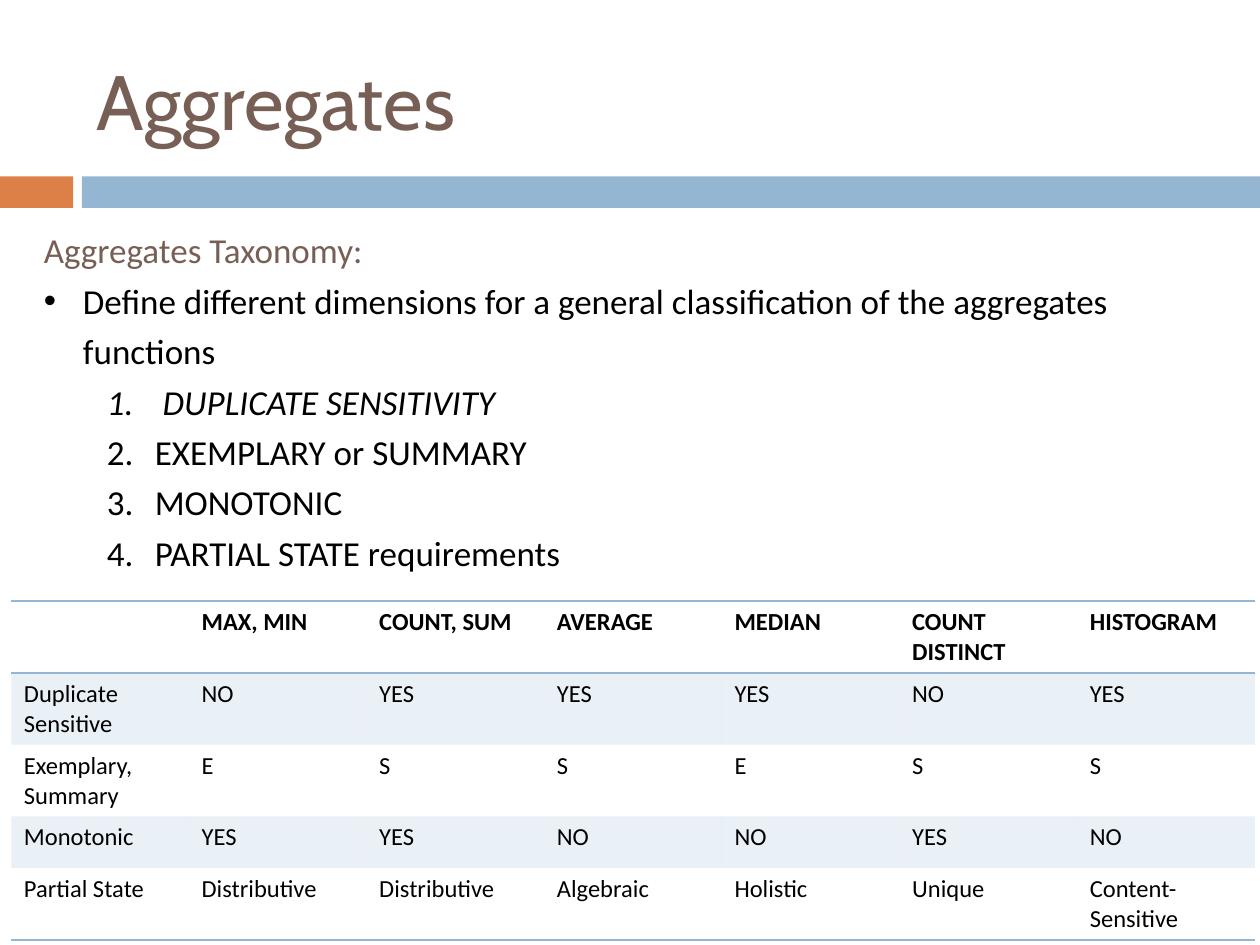
from pptx import Presentation
from pptx.dml.color import RGBColor
from pptx.enum.shapes import MSO_SHAPE as Shape
from pptx.enum.text import MSO_ANCHOR as Anchor, MSO_AUTO_SIZE as AutoSize
from pptx.oxml.ns import qn
from pptx.util import Inches, Pt
from lxml.etree import SubElement, Element

BROWN = RGBColor(0x77, 0x5F, 0x55)
ORANGE = RGBColor(0xDD, 0x80, 0x47)
BLUE = RGBColor(0x94, 0xB6, 0xD2)
BLACK = RGBColor(0, 0, 0)

TAXONOMY = [
    # text, colour, level, left margin, hanging indent, marker, italic
    ("Aggregates Taxonomy:", BROWN, 0, 0, 0, None, False),
    ("Define different dimensions for a general classification of the "
     "aggregates functions", BLACK, 0, 0.31, 0.31, "bullet", False),
    (" DUPLICATE SENSITIVITY", BLACK, 1, 0.88, 0.38, "number", True),
    ("EXEMPLARY or SUMMARY", BLACK, 1, 0.88, 0.38, "number", False),
    ("MONOTONIC", BLACK, 1, 0.88, 0.38, "number", False),
    ("PARTIAL STATE requirements", BLACK, 1, 0.88, 0.38, "number", False),
]

AGGREGATES = [
    ["", "MAX, MIN", "COUNT, SUM", "AVERAGE", "MEDIAN", "COUNT DISTINCT", "HISTOGRAM"],
    ["Duplicate Sensitive", "NO", "YES", "YES", "YES", "NO", "YES"],
    ["Exemplary, Summary", "E", "S", "S", "E", "S", "S"],
    ["Monotonic", "YES", "YES", "NO", "NO", "YES", "NO"],
    ["Partial State", "Distributive", "Distributive", "Algebraic", "Holistic",
     "Unique", "Content-Sensitive"],
]
ROW_HEIGHTS = [0.57, 0.57, 0.57, 0.41, 0.57]


class SlideBuilder:
    title_font = "Cabin"
    body_font = "Calibri"

    def __init__(self, slide):
        self.slide = slide

    def style(self, paragraph, font, size, color, bold=False, italic=False):
        for run in paragraph.runs:
            run.font.name = font
            run.font.size = Pt(size)
            run.font.color.rgb = color
            run.font.bold = bold
            run.font.italic = italic

    def bar(self, left, top, width, height, color):
        bar = self.slide.shapes.add_shape(
            Shape.RECTANGLE, Inches(left), Inches(top), Inches(width), Inches(height))
        bar.shadow.inherit = False
        bar.fill.solid()
        bar.fill.fore_color.rgb = color
        bar.line.fill.background()

    def text_frame(self, left, top, width, height):
        frame = self.slide.shapes.add_textbox(
            Inches(left), Inches(top), Inches(width), Inches(height)).text_frame
        frame.word_wrap = True
        return frame

    def title(self, text, *box):
        frame = self.text_frame(*box)
        frame.vertical_anchor = Anchor.MIDDLE
        frame.text = text
        self.style(frame.paragraphs[0], self.title_font, 44, BROWN)

    def outline(self, entries, *box):
        frame = self.text_frame(*box)
        frame.auto_size = AutoSize.SHAPE_TO_FIT_TEXT
        for index, (text, color, level, margin, hanging, marker, italic) in enumerate(entries):
            paragraph = frame.add_paragraph() if index else frame.paragraphs[0]
            paragraph.text = text
            paragraph.level = level
            paragraph.line_spacing = 1.2
            self.style(paragraph, self.body_font, 20, color, italic=italic)
            self.marker(paragraph, margin, hanging, marker)

    def marker(self, paragraph, margin, hanging, marker):
        properties = paragraph._p.get_or_add_pPr()
        properties.set("marL", str(Inches(margin)))
        properties.set("indent", str(-Inches(hanging)))
        if marker == "bullet":
            SubElement(properties, qn("a:buFont"), typeface="Arial")
            SubElement(properties, qn("a:buChar"), char="•")
        elif marker == "number":
            SubElement(properties, qn("a:buFont"), typeface="+mj-lt")
            SubElement(properties, qn("a:buAutoNum"), type="arabicPeriod")

    def table(self, rows, heights, left, top, width):
        table = self.slide.shapes.add_table(
            len(rows), len(rows[0]), Inches(left), Inches(top),
            Inches(width), Inches(sum(heights))).table
        table.first_row = table.horz_banding = False
        for r, (row, height) in enumerate(zip(rows, heights)):
            table.rows[r].height = Inches(height)
            sides = {0: ("T", "B"), 1: ("T",), len(rows) - 1: ("B",)}.get(r, ())
            for c, text in enumerate(row):
                cell = table.cell(r, c)
                cell.text = text
                self.style(cell.text_frame.paragraphs[0], self.body_font, 14, BLACK, bold=r == 0)
                self.cell_fill(cell, shaded=r % 2 == 1)
                self.cell_borders(cell, sides)

    def cell_fill(self, cell, shaded):
        if not shaded:
            cell.fill.background()
            return
        cell.fill.solid()
        cell.fill.fore_color.rgb = BLUE
        color = cell._tc.tcPr.find(".//" + qn("a:srgbClr"))
        SubElement(color, qn("a:alpha"), val="20000")

    def cell_borders(self, cell, sides):
        for position, side in enumerate("LRTB"):
            line = Element(qn("a:ln" + side), w=str(Pt(1)))
            if side in sides:
                fill = SubElement(line, qn("a:solidFill"))
                SubElement(fill, qn("a:srgbClr"), val=str(BLUE))
            else:
                SubElement(line, qn("a:noFill"))
            cell._tc.tcPr.insert(position, line)


def main():
    deck = Presentation()
    deck.slide_width, deck.slide_height = Inches(10), Inches(7.5)
    builder = SlideBuilder(deck.slides.add_slide(deck.slide_layouts[6]))

    # Header band and title
    builder.bar(0, 1.4, 0.58, 0.25, ORANGE)
    builder.bar(0.65, 1.4, 9.35, 0.25, BLUE)
    builder.title("Aggregates", 0.67, 0.25, 8.92, 1.08)

    # Comparison of aggregate functions
    builder.table(AGGREGATES, ROW_HEIGHTS, 0.09, 4.77, 9.87)

    # Taxonomy outline
    builder.outline(TAXONOMY, 0.25, 1.7, 9.49, 2.92)

    deck.save("out.pptx")


if __name__ == "__main__":
    main()
